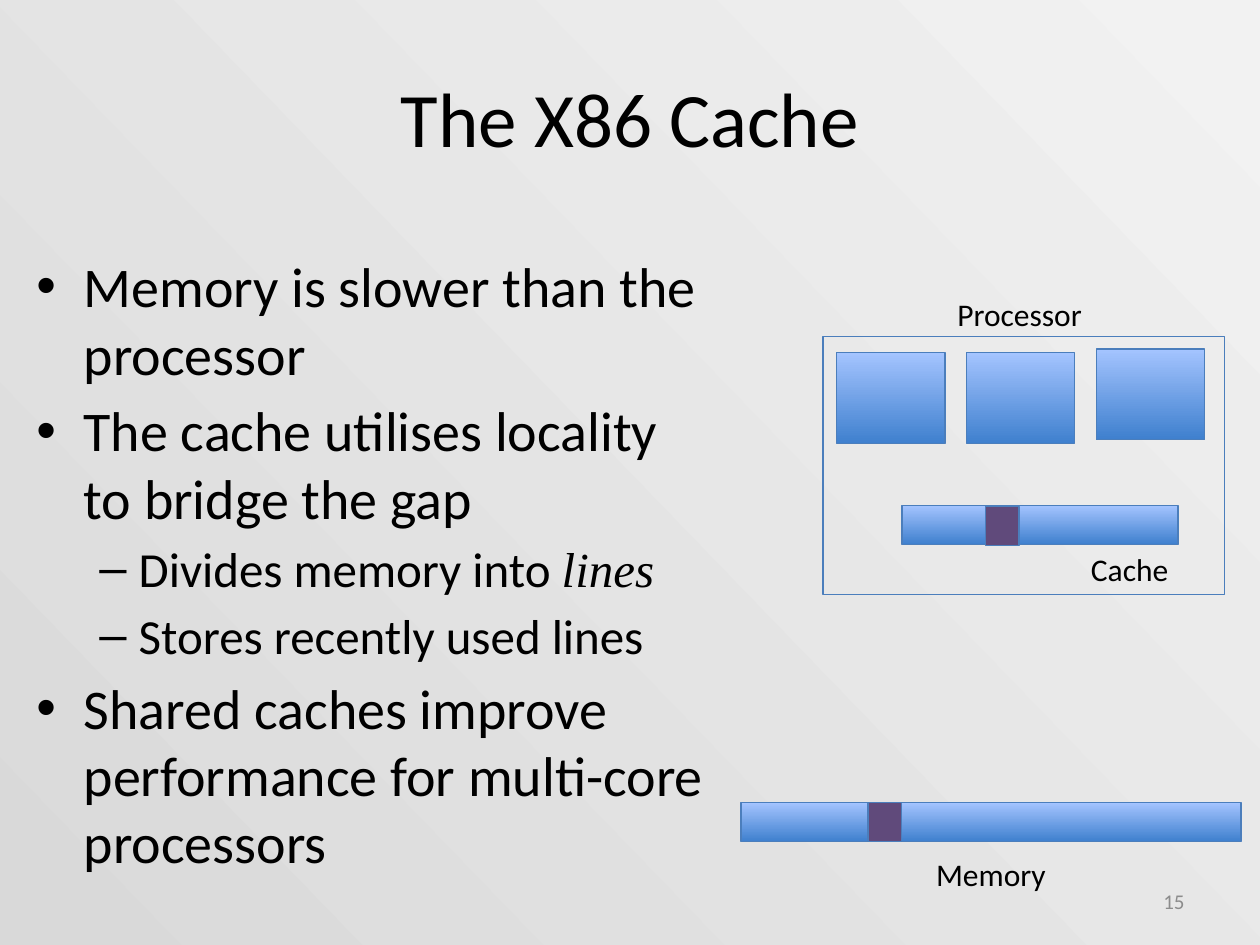
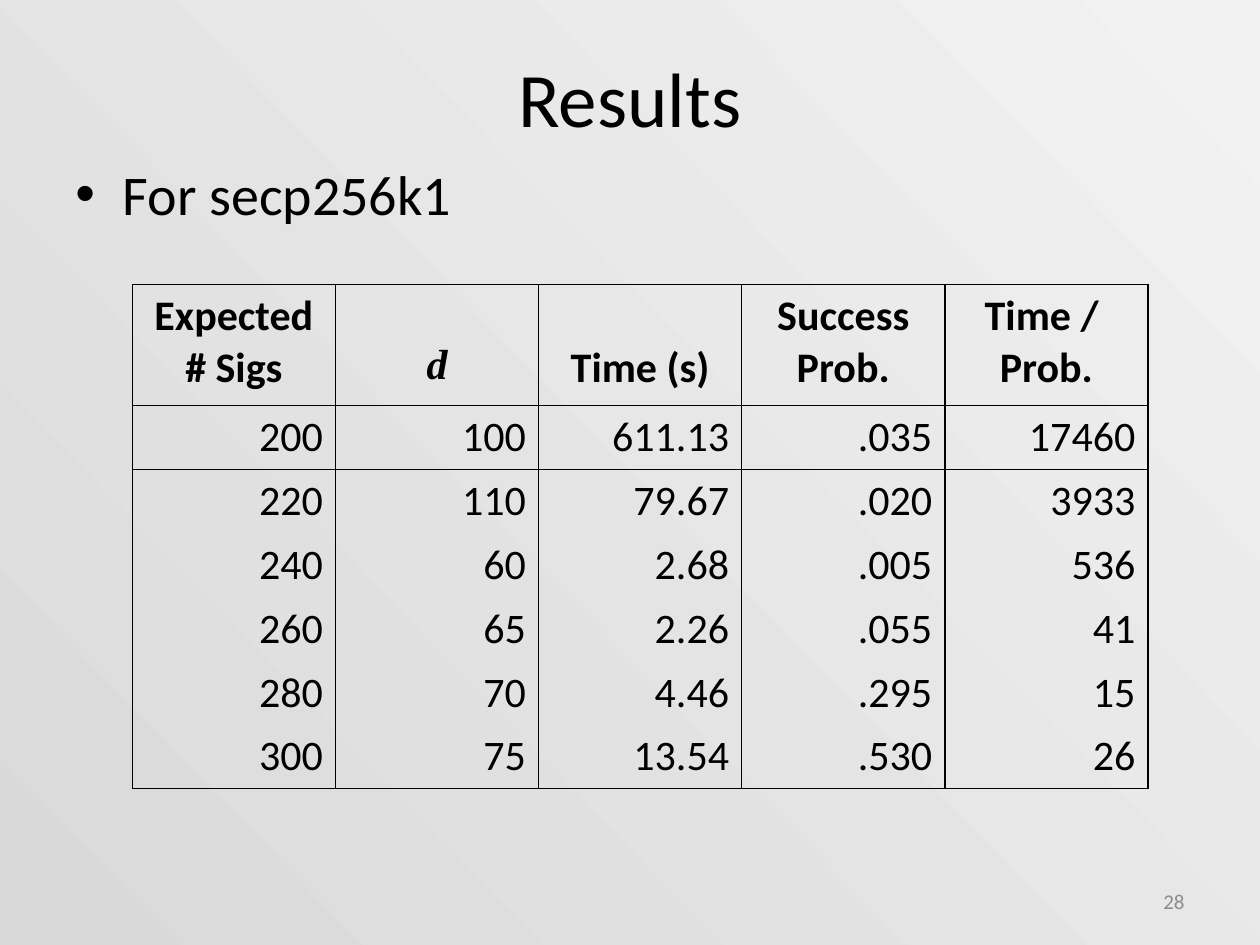
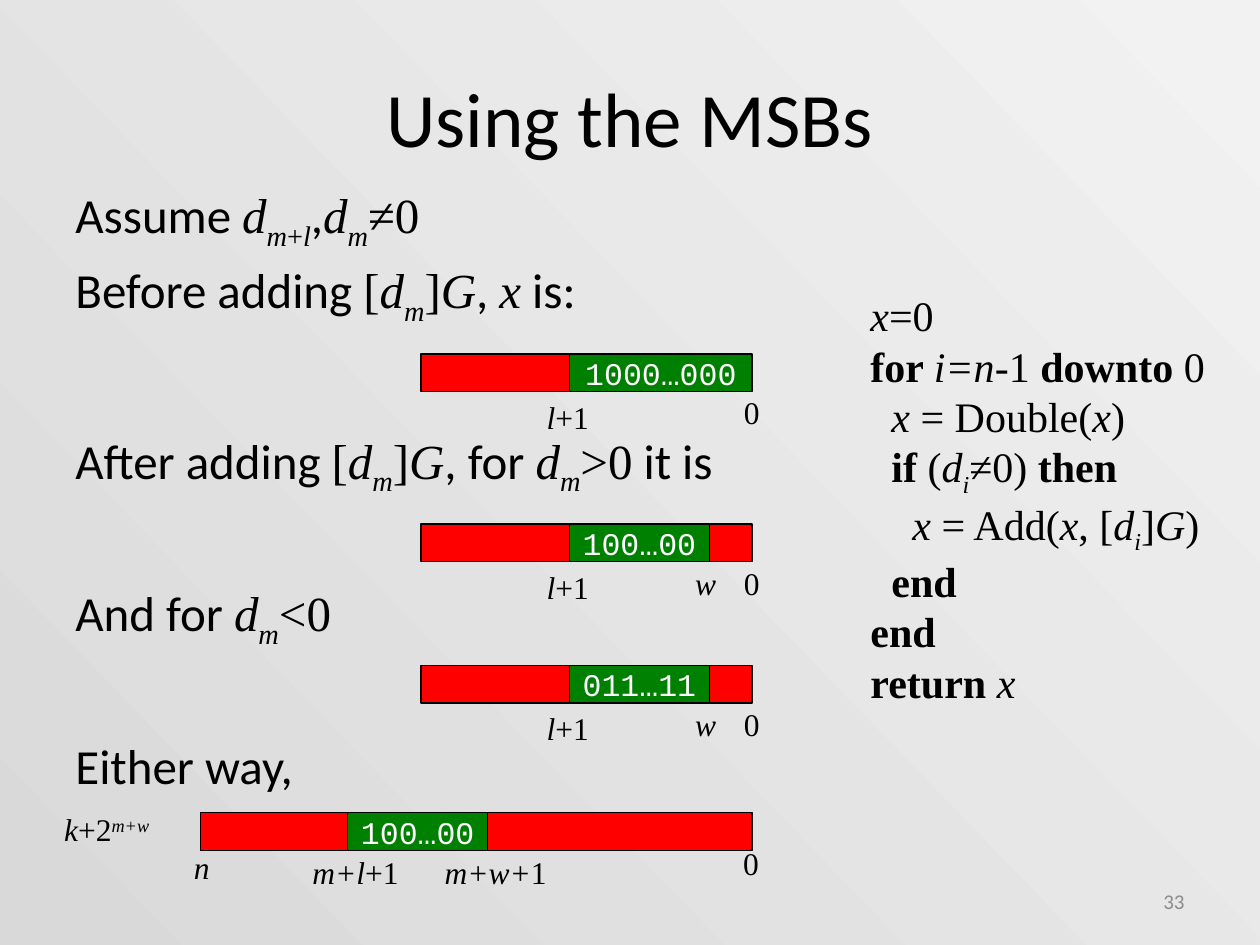
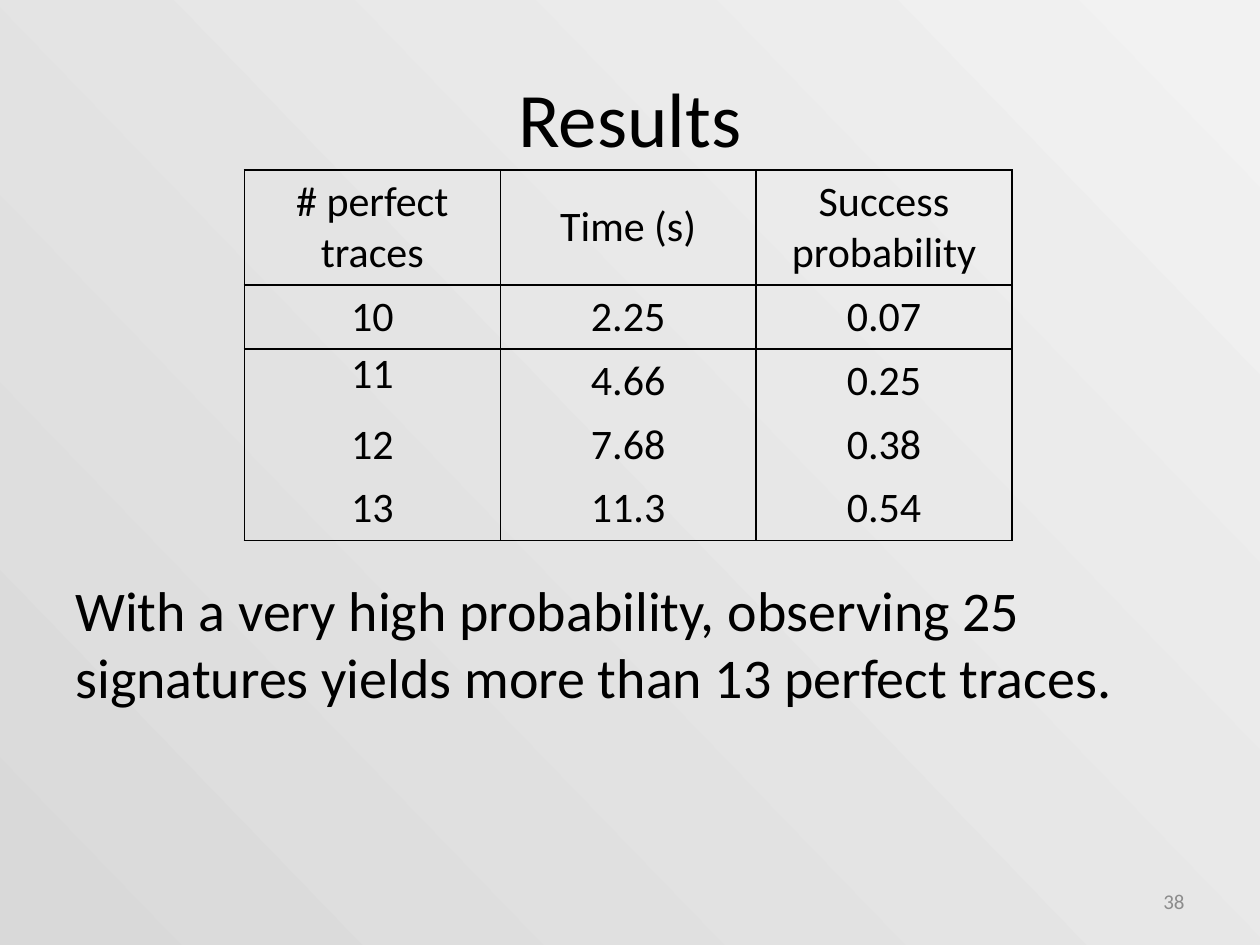
from lxml import etree
from pptx import Presentation
from pptx.dml.color import RGBColor
from pptx.enum.shapes import MSO_SHAPE as Shape
from pptx.enum.text import MSO_ANCHOR as Anchor, MSO_AUTO_SIZE as AutoSize, PP_ALIGN as Align
from pptx.oxml.ns import qn
from pptx.util import Pt

SANS, SERIF, MONO = "Calibri", "Times New Roman", "Courier New"
BLACK, WHITE, GREY = "000000", "FFFFFF", "8C8C8C"
RED, GREEN, PURPLE, OUTLINE = "FF0000", "008000", "604A7B", "4B7EBC"
BACKGROUND = ("F2F2F2", "D9D9D9")
BLUE = ("3F80CE", "A4C4FF")

# Text is cut at "|"; the first sign of a piece may choose one of these styles.
STYLES = {
    "*": {"name": SERIF, "italic": True},
    "$": {"name": SERIF},
    "!": {"name": SERIF, "bold": True},
    "_": {"name": SERIF, "italic": True},
    "~": {"name": SERIF},
    "^": {"name": SERIF, "italic": True},
}
BASELINES = {"_": "-25000", "~": "-25000", "^": "30000"}

TITLE_BOX = (36, 21.6, 648, 90)
RESULTS_TITLE_BOX = (36, 22.3, 648, 65.5)
NUMBER_BOX = (516, 500.4, 168, 28.8)
LABEL_HEIGHT = 28.8

# Bullet levels: size, left margin, hanging indent, sign, space before
LEVELS = [(32, 27, -27, "•", 5.5), (28, 58.5, -22.5, "–", 4.5)]

CACHE_POINTS = [
    (0, "Memory is slower than the processor"),
    (0, "The cache utilises locality to bridge the gap"),
    (1, "Divides memory into |*lines"),
    (1, "Stores recently used lines"),
    (0, "Shared caches improve performance for multi-core processors"),
]
PROCESSOR_BOX = (470.2, 192.2, 229.7, 147.6)
CORE_LEFT, CORE_PITCH, CORE_SIZE = 478, 74.2, (62, 51.8)
CORE_TOPS = [201.6, 201.6, 199.4]
MEMORY_BARS = [(423.4, 458.6, 285.8, 22.3), (515.5, 288.7, 157.7, 22.3)]
MEMORY_LINES = [(496, 458.6, 19.4, 22.3), (563, 289.4, 19.4, 22.3)]
CACHE_LABELS = [("Processor", 540, 164.9, 86.4), ("Memory", 527.8, 485.3, 77.8),
                ("Cache", 616.3, 311, 59)]

SIGNATURES = [
    ("Expected\n# Sigs", "*d", "Time (s)", "Success\nProb.", "Time / \nProb."),
    ("200", "100", "611.13", ".035", "17460"),
    ("220", "110", "79.67", ".020", "3933"),
    ("240", "60", "2.68", ".005", "536"),
    ("260", "65", "2.26", ".055", "41"),
    ("280", "70", "4.46", ".295", "15"),
    ("300", "75", "13.54", ".530", "26"),
]
TRACES = [
    ("# perfect traces", "Time (s)", "Success probability"),
    ("10", "2.25", "0.07"),
    ("11", "4.66", "0.25"),
    ("12", "7.68", "0.38"),
    ("13", "11.3", "0.54"),
]
TRACES_NOTE = ("With a very high probability, observing 25 signatures "
               "yields more than 13 perfect traces.")

# Space before, text
MSB_STEPS = [
    (4.5, "Assume |*d|_m|~+|_l|,|*d|_m|$≠0"),
    (4.5, "Before adding |$[|*d|_m|$]|*G|, |*x| is:"),
    (59.1, "After adding |$[|*d|_m|$]|*G|, for |*d|_m|$>0| it is"),
    (49.1, "And for |*d|_m|$<0"),
    (49.1, "Either way,"),
]
# Nesting depth, text
ALGORITHM = [
    (0, "*x|$=0"),
    (0, "!for |*i=n|$-1 |!downto|$ 0"),
    (1, "*x|$ = Double(|*x|$)"),
    (1, "!if|$ (|*d|_i|$≠0) |!then"),
    (2, "*x|$ = Add(|*x|$, [|*d|_i|$]|*G|$)"),
    (1, "!end"),
    (0, "!end"),
    (0, "!return |*x"),
]
INDENT = 12
BAR_RIGHT, BAR_HEIGHT = 429.8, 21.6
ZERO = ("$0", 418, 23.8, 19)
L_PLUS_1 = ("*l|$+1", 305.3, 40.3, 21.6)
W = ("*w", 390.2, 28.1, 19.4)
# Top, left, known bits from, known bits to, bits, labels (text, left, width, drop)
NUMBER_BARS = [
    (202.3, 240.5, 325.4, BAR_RIGHT, "1000…000", [ZERO, L_PLUS_1]),
    (299.5, 240.5, 325.4, 405.4, "100…00", [ZERO, L_PLUS_1, W]),
    (380.2, 240.5, 325.4, 405.4, "011…11", [ZERO, L_PLUS_1, W]),
    (464.4, 114.5, 198.7, 278.6, "100…00",
     [("$0", 417.6, 23.8, 14.4), ("*k|$+2|^m+w", 29.5, 70.6, -5),
      ("*m+l|$+1", 171.4, 65.5, 19.4), ("*m+w+|$1", 247, 74.9, 19.4),
      ("*n", 103.7, 25.2, 16.6)]),
]


def rgb(value):
    return RGBColor.from_string(value)


def points(*lengths):
    return [Pt(length) for length in lengths]


def paint(fill, colour, angle=90):
    """Fill with nothing, one colour, or a gradient between two colours."""
    if colour is None:
        fill.background()
    elif isinstance(colour, tuple):
        fill.gradient()
        fill.gradient_angle = angle
        for stop, value in zip(fill.gradient_stops, colour):
            stop.color.rgb = rgb(value)
    else:
        fill.solid()
        fill.fore_color.rgb = rgb(colour)


def write(paragraph, text, size=18, colour=BLACK, align=None, **font):
    paragraph.alignment = align
    for piece in text.split("|"):
        sign = piece[0] if piece[0] in STYLES else ""
        run = paragraph.add_run()
        run.text = piece[len(sign):]
        values = {"name": SANS, "size": Pt(size), **font, **STYLES.get(sign, {})}
        for key, value in values.items():
            setattr(run.font, key, value)
        run.font.color.rgb = rgb(colour)
        if sign in BASELINES:
            run.font._element.set("baseline", BASELINES[sign])


def next_paragraph(frame):
    first = frame.paragraphs[0]
    return frame.add_paragraph() if first.runs else first


def indent(paragraph, margin, hanging=0, bullet=None):
    properties = paragraph._p.get_or_add_pPr()
    properties.set("marL", str(Pt(margin)))
    properties.set("indent", str(Pt(hanging)))
    if bullet:
        etree.SubElement(properties, qn("a:buFont")).set("typeface", "Arial")
        etree.SubElement(properties, qn("a:buChar")).set("char", bullet)


def add_frame(slide, box, anchor=Anchor.TOP, wrap=True):
    frame = slide.shapes.add_textbox(*points(*box)).text_frame
    frame.word_wrap = wrap
    frame.vertical_anchor = anchor
    frame.auto_size = AutoSize.NONE if wrap else AutoSize.SHAPE_TO_FIT_TEXT
    return frame


def add_label(slide, text, left, top, width):
    frame = add_frame(slide, (left, top, width, LABEL_HEIGHT), wrap=False)
    write(frame.paragraphs[0], text)


def add_rectangle(slide, box, colour, outline=OUTLINE):
    rectangle = slide.shapes.add_shape(Shape.RECTANGLE, *points(*box))
    rectangle.shadow.inherit = False
    paint(rectangle.fill, colour)
    rectangle.line.color.rgb = rgb(outline)
    rectangle.line.width = Pt(0.75)
    return rectangle


def add_bullets(slide, box, items):
    frame = add_frame(slide, box)
    for level, text in items:
        size, margin, hanging, bullet, before = LEVELS[level]
        paragraph = next_paragraph(frame)
        paragraph.level = level
        paragraph.space_before = Pt(before)
        indent(paragraph, margin, hanging, bullet)
        write(paragraph, text, size)


def add_slide(prs, title, number, box=TITLE_BOX):
    slide = prs.slides.add_slide(prs.slide_layouts[6])
    write(add_frame(slide, box, Anchor.MIDDLE).paragraphs[0], title, 44, align=Align.CENTER)
    write(add_frame(slide, NUMBER_BOX, Anchor.MIDDLE).paragraphs[0], str(number), 12, GREY,
          Align.RIGHT)
    return slide


def set_borders(cell, edges):
    """Draw the edges whose value is true, and clear the others."""
    properties = cell._tc.get_or_add_tcPr()
    for place, (edge, drawn) in enumerate(edges.items()):
        line = etree.Element(qn("a:ln" + edge), w=str(Pt(1)))
        if drawn:
            fill = etree.SubElement(line, qn("a:solidFill"))
            etree.SubElement(fill, qn("a:srgbClr")).set("val", BLACK)
        else:
            etree.SubElement(line, qn("a:noFill"))
        properties.insert(place, line)


def add_results(slide, rows, left, top, column_width, header_height, align, bold):
    """Add a table ruled around the header and the first row of results."""
    row_height, last = 36.5, len(rows) - 1
    size = (column_width * len(rows[0]), header_height + row_height * last)
    table = slide.shapes.add_table(len(rows), len(rows[0]), *points(left, top, *size)).table
    table.first_row = table.horz_banding = False
    for column in table.columns:
        column.width = Pt(column_width)
    for r, texts in enumerate(rows):
        table.rows[r].height = Pt(row_height if r else header_height)
        for c, text in enumerate(texts):
            cell = table.cell(r, c)
            paint(cell.fill, None)
            set_borders(cell, {"L": True, "R": True, "T": r < 3, "B": r < 2 or r == last})
            for line in text.split("\n"):
                write(next_paragraph(cell.text_frame), line, 24,
                      align=align if r else Align.CENTER, bold=bold and r == 0)
    return table


def build_cache(prs):
    slide = add_slide(prs, "The X86 Cache", 15)
    add_bullets(slide, (13.7, 140.4, 397.4, 356.4), CACHE_POINTS)
    add_rectangle(slide, PROCESSOR_BOX, None)
    for i, top in enumerate(CORE_TOPS):
        add_rectangle(slide, (CORE_LEFT + i * CORE_PITCH, top, *CORE_SIZE), BLUE)
    for colour, boxes in ((BLUE, MEMORY_BARS), (PURPLE, MEMORY_LINES)):
        for box in boxes:
            add_rectangle(slide, box, colour)
    for label in CACHE_LABELS:
        add_label(slide, *label)


def build_signature_results(prs):
    slide = add_slide(prs, "Results", 28, RESULTS_TITLE_BOX)
    add_bullets(slide, (36, 87.8, 648, 394.6), [(0, "For secp256k1")])
    table = add_results(slide, SIGNATURES, 75.6, 162.7, 116.1, 69, Align.RIGHT, True)
    for c, header in enumerate(SIGNATURES[0]):
        if "\n" not in header:
            table.cell(0, c).margin_top = Pt(32.9)


def build_msbs(prs):
    slide = add_slide(prs, "Using the MSBs", 33)
    steps = add_frame(slide, (36, 102.2, 423.4, 388.8))
    for before, text in MSB_STEPS:
        paragraph = next_paragraph(steps)
        paragraph.space_before = Pt(before)
        write(paragraph, text, 28)
    algorithm = add_frame(slide, (490.3, 162, 209.5, 239.8), wrap=False)
    for depth, text in ALGORITHM:
        paragraph = next_paragraph(algorithm)
        indent(paragraph, depth * INDENT)
        write(paragraph, text, 24)
    for top, left, start, end, bits, labels in NUMBER_BARS:
        parts = [(left, start, RED), (start, end, GREEN), (end, BAR_RIGHT, RED)]
        for x, right, colour in parts:
            if right == x:
                continue
            part = add_rectangle(slide, (x, top, right - x, BAR_HEIGHT), colour, BLACK)
            if colour == GREEN:
                part.text_frame.vertical_anchor = Anchor.MIDDLE
                write(part.text_frame.paragraphs[0], bits, colour=WHITE, align=Align.CENTER,
                      name=MONO)
        for text, x, width, drop in labels:
            add_label(slide, text, x, top + drop, width)


def build_trace_results(prs):
    slide = add_slide(prs, "Results", 38)
    note = add_frame(slide, (36, 325.4, 648, 157)).paragraphs[0]
    note.space_before = Pt(LEVELS[0][-1])
    write(note, TRACES_NOTE, 32)
    table = add_results(slide, TRACES, 139.7, 97.2, 146.2, 65.8, Align.CENTER, False)
    for c in range(len(TRACES[0])):
        table.cell(0, c).vertical_anchor = Anchor.MIDDLE
    eleven = table.cell(2, 0)
    eleven.margin_top = eleven.margin_bottom = Pt(0)


def main():
    prs = Presentation()
    prs.slide_width, prs.slide_height = points(720, 540)
    paint(prs.slide_master.background.fill, BACKGROUND, 224)
    for build in (build_cache, build_signature_results, build_msbs, build_trace_results):
        build(prs)
    prs.save("out.pptx")


if __name__ == "__main__":
    main()
